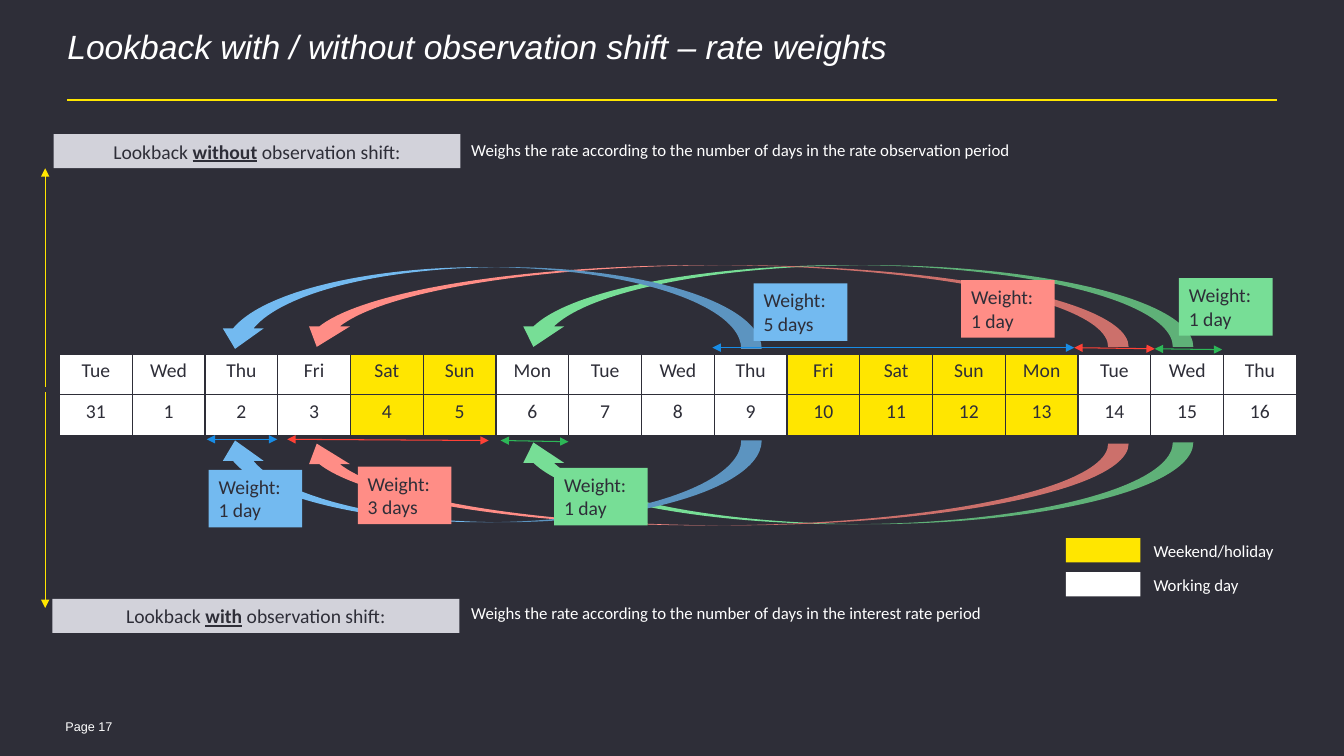
from dataclasses import dataclass

from lxml.etree import SubElement
from pptx import Presentation
from pptx.dml.color import RGBColor
from pptx.enum.shapes import MSO_CONNECTOR, MSO_SHAPE
from pptx.enum.text import MSO_ANCHOR, PP_ALIGN
from pptx.oxml.ns import qn
from pptx.util import Cm, Pt


@dataclass(frozen=True)
class Theme:
    dark: str = "2E2E38"
    white: str = "FFFFFF"
    yellow: str = "FFE600"
    grey: str = "D2D2DA"
    blue: str = "73BAF0"
    red: str = "FF8D86"
    green: str = "77DE96"
    blue_line: str = "188CE5"
    red_line: str = "FF4136"
    green_line: str = "2DB757"
    title_size: int = 24
    body_size: int = 14
    note_size: int = 12
    page_size: int = 9


theme = Theme()
presentation = Presentation()
presentation.slide_width, presentation.slide_height = Cm(33.88), Cm(19.05)
slide = presentation.slides.add_slide(presentation.slide_layouts[6])
slide.background.fill.solid()
slide.background.fill.fore_color.rgb = RGBColor.from_string(theme.dark)
shapes = slide.shapes


def write(frame, text, size=theme.body_size, color=theme.dark, font="Calibri",
          align=PP_ALIGN.LEFT, italic=False, emphasis=None, spacing=None,
          wrap=True, margins=None):
    """Fill a text frame; the emphasised word is bold and underlined."""
    frame.word_wrap = wrap
    if margins:
        (frame.margin_left, frame.margin_top,
         frame.margin_right, frame.margin_bottom) = [Cm(margin) for margin in margins]
    for index, line in enumerate(text.split("\n")):
        paragraph = frame.add_paragraph() if index else frame.paragraphs[0]
        paragraph.alignment = align
        paragraph.line_spacing = spacing
        for part in line.partition(emphasis) if emphasis else [line]:
            run = paragraph.add_run()
            run.text = part
            run.font.name, run.font.size = font, Pt(size)
            run.font.color.rgb = RGBColor.from_string(color)
            run.font.italic = italic
            run.font.bold = run.font.underline = part == emphasis


def add_filled(kind, left, top, width, height, color):
    shape = shapes.add_shape(kind, Cm(left), Cm(top), Cm(width), Cm(height))
    shape.shadow.inherit = False
    shape.fill.solid()
    shape.fill.fore_color.rgb = RGBColor.from_string(color)
    shape.line.fill.background()
    return shape


# Title and page number
title = shapes.add_textbox(Cm(1.7), Cm(0.81), Cm(30.5), Cm(1.65))
write(title.text_frame, "Lookback with / without observation shift – rate weights",
      size=theme.title_size, color=theme.white, font="Arial", italic=True,
      spacing=0.85, margins=(0, 0, 0, 0))
page = shapes.add_textbox(Cm(1.65), Cm(18.08), Cm(2.54), Cm(0.43))
write(page.text_frame, "Page 17", size=theme.page_size, color=theme.white,
      font="Arial", spacing=0.85, margins=(0, 0.1, 0, 0))

# Method labels and explanations
for left, top, note_top, word, period in [
    (1.35, 3.38, 3.4, "without", "rate observation"),
    (1.32, 15.09, 15.06, "with", "interest rate"),
]:
    label = add_filled(MSO_SHAPE.RECTANGLE, left, top, 10.26, 0.86, theme.grey)
    label.text_frame.vertical_anchor = MSO_ANCHOR.MIDDLE
    write(label.text_frame, f"Lookback {word} observation shift:",
          align=PP_ALIGN.CENTER, emphasis=word)
    note = shapes.add_textbox(Cm(11.63), Cm(note_top), Cm(17.15), Cm(0.86))
    write(note.text_frame,
          f"Weighs the rate according to the number of days in the {period} period",
          size=theme.note_size, color=theme.white)

# Calendar
weekdays = ["Mon", "Tue", "Wed", "Thu", "Fri", "Sat", "Sun"]
dates = [31, *range(1, 17)]
days_off = {4, 5, 10, 11, 12, 13}
calendar = shapes.add_table(2, len(dates), Cm(1.5), Cm(8.92), Cm(31.19), Cm(2.06)).table
for column, date in enumerate(dates):
    calendar.columns[column].width = Cm(31.19 / len(dates))
    for row, text in enumerate([weekdays[(column + 1) % 7], str(date)]):
        cell = calendar.cell(row, column)
        cell.fill.solid()
        cell.fill.fore_color.rgb = RGBColor.from_string(
            theme.yellow if date in days_off else theme.white)
        write(cell.text_frame, text, align=PP_ALIGN.CENTER)
        properties = cell._tc.get_or_add_tcPr()
        for index, side in enumerate(["lnL", "lnR", "lnT", "lnB"]):
            border = properties.makeelement(qn(f"a:{side}"), {"w": str(Pt(1))})
            fill = SubElement(border, qn("a:solidFill"))
            SubElement(fill, qn("a:srgbClr"), val=theme.dark)
            properties.insert(index, border)

# Curved arrows from interest day to observation day
for color, left, width, below, above in [
    (theme.green, 12.93, 17.15, 11.15, 6.68),
    (theme.red, 7.47, 20.98, 11.18, 6.68),
    (theme.blue, 5.41, 13.79, 11.1, 6.73),
]:
    for top in (below, above):
        arrow = add_filled(MSO_SHAPE.CURVED_UP_ARROW, left, top, width, 2.06, color)
        arrow.rotation = 180
        if top == below:
            arrow._element.spPr.find(qn("a:xfrm")).set("flipV", "1")

# Weight boxes
for left, top, days, color in [
    (29.72, 7.01, "1 day", theme.green),
    (13.97, 11.79, "1 day", theme.green),
    (24.23, 7.06, "1 day", theme.red),
    (9.02, 11.76, "3 days", theme.red),
    (19, 7.14, "5 days", theme.blue),
    (5.26, 11.84, "1 day", theme.blue),
]:
    box = add_filled(MSO_SHAPE.RECTANGLE, left, top, 2.36, 1.45, color)
    box.text_frame.vertical_anchor = MSO_ANCHOR.TOP
    write(box.text_frame, f"Weight:\n{days}", wrap=False)

# Title rule, method arrows and weight spans
for x1, y1, x2, y2, color, width, arrowheads in [
    (1.7, 2.51, 32.18, 2.51, theme.yellow, 1.5, []),
    (1.14, 9.75, 1.14, 4.24, theme.yellow, 0.75, ["tailEnd"]),
    (1.14, 9.88, 1.14, 15.32, theme.yellow, 0.75, ["tailEnd"]),
    (5.21, 11.07, 6.99, 11.07, theme.blue_line, 0.75, ["headEnd", "tailEnd"]),
    (7.24, 11.07, 12.32, 11.1, theme.red_line, 0.75, ["headEnd", "tailEnd"]),
    (12.62, 11.1, 14.33, 11.13, theme.green_line, 0.75, ["headEnd", "tailEnd"]),
    (29.11, 8.79, 30.81, 8.81, theme.green_line, 0.75, ["headEnd", "tailEnd"]),
    (27.08, 8.76, 29.11, 8.79, theme.red_line, 0.75, ["headEnd", "tailEnd"]),
    (17.96, 8.76, 27.08, 8.76, theme.blue_line, 0.75, ["headEnd", "tailEnd"]),
]:
    connector = shapes.add_connector(MSO_CONNECTOR.STRAIGHT, Cm(x1), Cm(y1), Cm(x2), Cm(y2))
    connector.line.color.rgb = RGBColor.from_string(color)
    connector.line.width = Pt(width)
    for end in arrowheads:
        SubElement(connector.line._get_or_add_ln(), qn(f"a:{end}"), type="triangle")
    SubElement(connector._element.spPr, qn("a:effectLst"))

# Legend
for index, (text, color) in enumerate([("Weekend/holiday", theme.yellow),
                                       ("Working day", theme.white)]):
    offset = index * 0.86
    add_filled(MSO_SHAPE.RECTANGLE, 26.87, 13.56 + offset, 1.88, 0.61, color)
    caption = shapes.add_textbox(Cm(28.83), Cm(13.49 + offset), Cm(4.11), Cm(0.86))
    write(caption.text_frame, text, size=theme.note_size, color=theme.white)

presentation.save("out.pptx")
